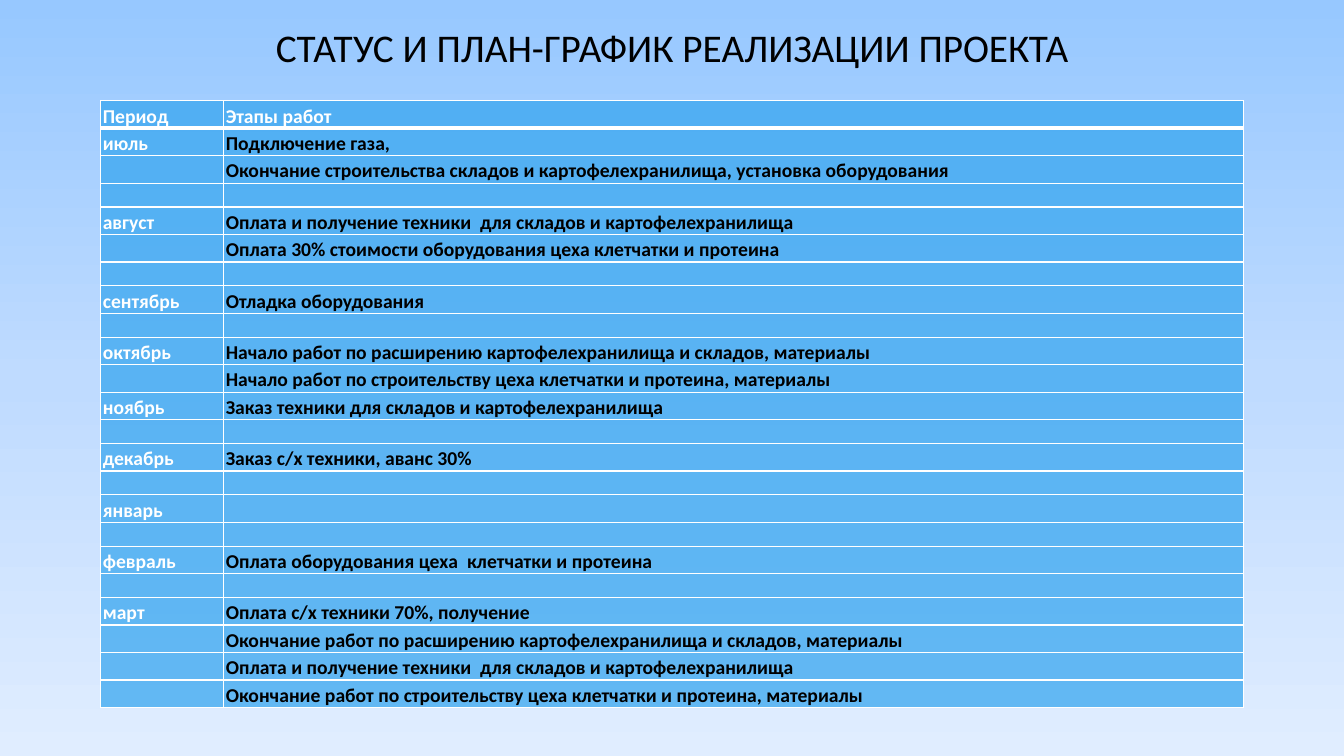
"""Build the slide with the project status and schedule table."""
from lxml.etree import SubElement
from pptx import Presentation
from pptx.dml.color import RGBColor
from pptx.enum.text import MSO_ANCHOR as Anchor, PP_ALIGN as Align
from pptx.oxml.ns import qn
from pptx.util import Inches, Pt

TITLE = "СТАТУС И ПЛАН-ГРАФИК РЕАЛИЗАЦИИ ПРОЕКТА"
ROWS = [
    ("Период", "Этапы работ"),
    ("июль", "Подключение газа,"),
    ("", "Окончание строительства складов и картофелехранилища, установка оборудования"),
    ("", ""),
    ("август", "Оплата и получение техники  для складов и картофелехранилища"),
    ("", "Оплата 30% стоимости оборудования цеха клетчатки и протеина"),
    ("", ""),
    ("сентябрь", "Отладка оборудования"),
    ("", ""),
    ("октябрь", "Начало работ по расширению картофелехранилища и складов, материалы"),
    ("", "Начало работ по строительству цеха клетчатки и протеина, материалы"),
    ("ноябрь", "Заказ техники для складов и картофелехранилища"),
    ("", ""),
    ("декабрь", "Заказ с/х техники, аванс 30%"),
    ("", ""),
    ("январь", ""),
    ("", ""),
    ("февраль", "Оплата оборудования цеха  клетчатки и протеина"),
    ("", ""),
    ("март", "Оплата с/х техники 70%, получение"),
    ("", "Окончание работ по расширению картофелехранилища и складов, материалы"),
    ("", "Оплата и получение техники  для складов и картофелехранилища"),
    ("", "Окончание работ по строительству цеха клетчатки и протеина, материалы"),
]
COLUMNS = (1.22, 10.11)
TEXT_ROW, EMPTY_ROW = 0.27, 0.23
SKY = ((0, "97C8FF"), (50, "BFDBFF"), (100, "E0EDFF"))
FONT, WHITE, BLACK, BLUE = "Calibri", "FFFFFF", "000000", "2FA3EE"


def rgb(value):
    return RGBColor.from_string(value)


def set_font(p, size, color, bold=False):
    p.font.name, p.font.size, p.font.bold = FONT, Pt(size), bold
    p.font.color.rgb = rgb(color)


def set_background(s):
    fill = s.background.fill
    fill.gradient()
    fill.gradient_angle = 270
    stops = s._element.find(".//" + qn("a:gsLst"))
    for stop in list(stops):
        stops.remove(stop)
    for position, color in SKY:
        stop = SubElement(stops, qn("a:gs"), pos=str(position * 1000))
        SubElement(stop, qn("a:srgbClr"), val=color)


def set_borders(cell, widths):
    tc_pr = cell._tc.get_or_add_tcPr()
    for i, (side, width) in enumerate(widths.items()):
        line = SubElement(tc_pr, qn("a:ln" + side), w=str(Pt(width)))
        SubElement(SubElement(line, qn("a:solidFill")), qn("a:srgbClr"), val=WHITE)
        tc_pr.insert(i, line)


def fill_cell(cell, text, row, col):
    cell.margin_left = cell.margin_right = Inches(0.02)
    cell.margin_top = cell.margin_bottom = 0
    cell.vertical_anchor = Anchor.BOTTOM
    cell.fill.solid()
    cell.fill.fore_color.rgb = rgb(BLUE)
    color = cell._tc.tcPr.find(".//" + qn("a:srgbClr"))
    SubElement(color, qn("a:alpha"), val="70000")
    set_borders(cell, {"L": 1, "R": 1, "T": 3 if row == 1 else 1, "B": 3 if row == 0 else 1})
    p = cell.text_frame.paragraphs[0]
    if text:
        p.text = text
        p.line_spacing = 1.15
        set_font(p, 14, WHITE if row == 0 or col == 0 else BLACK, True)
    else:
        p._p.get_or_add_endParaRPr().set("sz", "1400")


def add_title(s):
    title = s.shapes.title
    title.left, title.top = Inches(1), Inches(0.2)
    title.width, title.height = Inches(11.33), Inches(0.59)
    tf = title.text_frame
    tf.text = TITLE
    tf.vertical_anchor = Anchor.MIDDLE
    p = tf.paragraphs[0]
    p.alignment, p.line_spacing = Align.CENTER, 0.9
    set_font(p, 28, BLACK)


def add_schedule(s):
    heights = [Inches(TEXT_ROW if any(row) else EMPTY_ROW) for row in ROWS]
    table = s.shapes.add_table(len(ROWS), len(COLUMNS), Inches(1), Inches(1),
                               Inches(sum(COLUMNS)), sum(heights)).table
    table.horz_banding = False
    for column, width in zip(table.columns, COLUMNS):
        column.width = Inches(width)
    for i, (texts, height) in enumerate(zip(ROWS, heights)):
        table.rows[i].height = height
        for j, text in enumerate(texts):
            fill_cell(table.cell(i, j), text, i, j)


def main():
    prs = Presentation()
    prs.slide_width, prs.slide_height = Inches(13.33), Inches(7.5)
    s = prs.slides.add_slide(prs.slide_layouts[5])
    set_background(s)
    add_title(s)
    add_schedule(s)
    prs.save("out.pptx")


if __name__ == "__main__":
    main()
